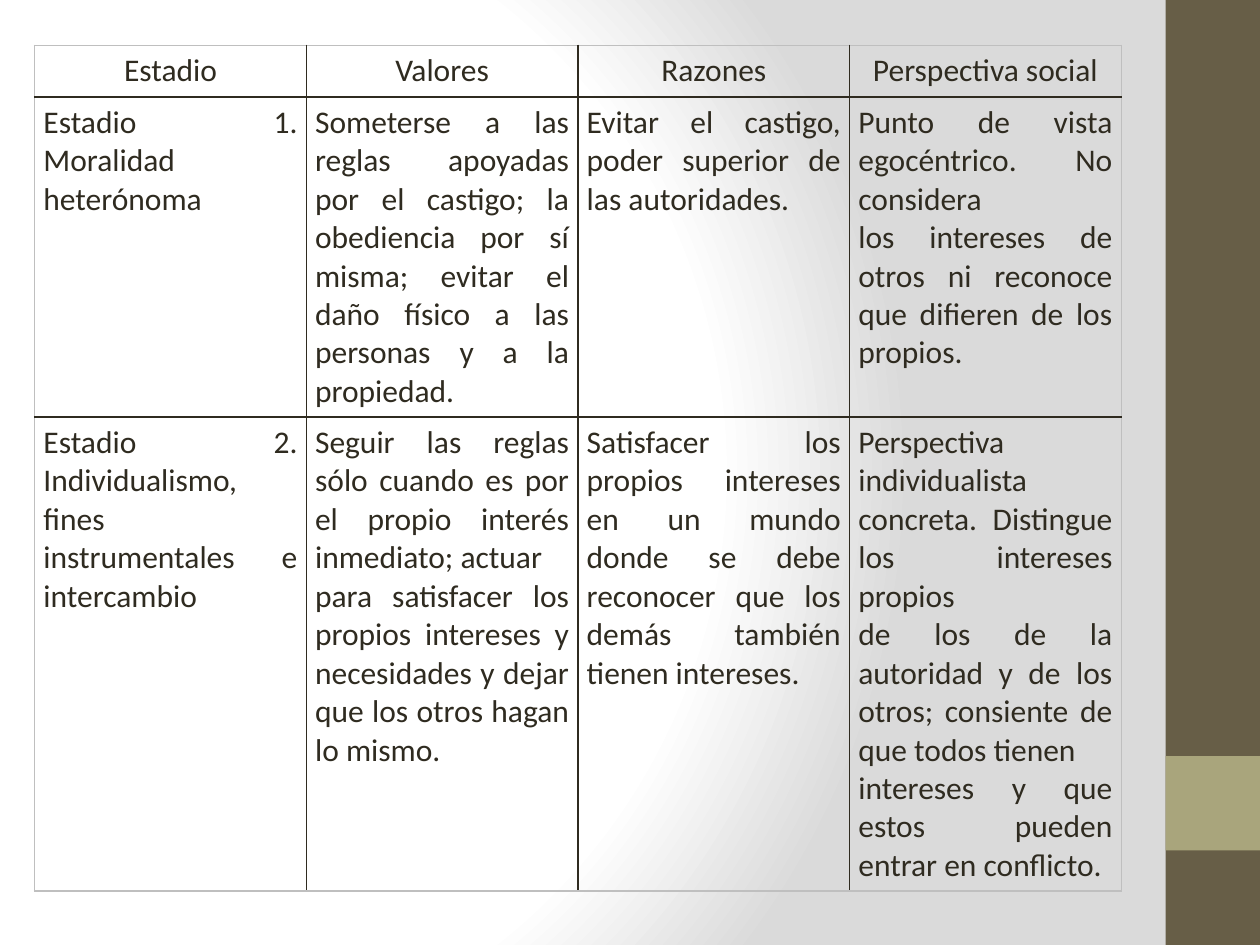
import lxml.etree
import pptx
import pptx.dml.color
import pptx.enum.shapes
import pptx.enum.text
import pptx.oxml
import pptx.oxml.ns
import pptx.util

RGBColor = pptx.dml.color.RGBColor
Inches = pptx.util.Inches
Align = pptx.enum.text.PP_ALIGN

INK = RGBColor(0x2F, 0x2B, 0x20)
FRAME = RGBColor(0xBF, 0xBF, 0xBF)
BROWN = RGBColor(0x67, 0x5E, 0x47)
OLIVE = RGBColor(0xA9, 0xA5, 0x7C)
WHITE = RGBColor(0xFF, 0xFF, 0xFF)
GREY = RGBColor(0xDA, 0xDA, 0xDA)

WIDTH, HEIGHT = Inches(10), Inches(7.5)
ROW_HEIGHTS = [0.41, 2.54, 3.76]

# Each line of a cell is a paragraph.
STAGES = [
    ["Estadio", "Valores", "Razones", "Perspectiva social"],
    [
        "Estadio 1. Moralidad heterónoma",
        "Someterse a las reglas apoyadas por el castigo; la obediencia por sí misma; "
        "evitar el daño físico a las personas y a la propiedad.",
        "Evitar el castigo, poder superior de las autoridades.",
        "Punto de vista egocéntrico. No considera\n"
        "los intereses de otros ni reconoce que difieren de los propios.",
    ],
    [
        "Estadio 2. Individualismo, fines instrumentales e intercambio",
        "Seguir las reglas sólo cuando es por el propio interés inmediato; actuar\n"
        "para satisfacer los propios intereses y necesidades y dejar que los otros "
        "hagan lo mismo.",
        "Satisfacer los propios intereses en un mundo donde se debe reconocer que "
        "los demás también tienen intereses.",
        "Perspectiva individualista concreta. Distingue los intereses propios\n"
        "de los de la autoridad y de los otros; consiente de que todos tienen\n"
        "intereses y que estos pueden entrar en conflicto.",
    ],
]


def write_text(frame, text, font="Calibri", size=18, color=INK, align=Align.JUSTIFY):
    frame.text = text
    for paragraph in frame.paragraphs:
        paragraph.alignment = align
        for run in paragraph.runs:
            run.font.name = font
            run.font.size = pptx.util.Pt(size)
            run.font.color.rgb = color


def set_borders(cell, colors, width=1):
    """Draw the left, right, top and bottom borders, in that order."""
    properties = cell._tc.get_or_add_tcPr()
    for index, (side, color) in enumerate(zip("LRTB", colors)):
        line = pptx.oxml.parse_xml(
            f'<a:ln{side} {pptx.oxml.ns.nsdecls("a")} w="{pptx.util.Pt(width)}">'
            f'<a:solidFill><a:srgbClr val="{color}"/></a:solidFill></a:ln{side}>')
        properties.insert(index, line)


class SlideBuilder:
    """Places elements on a slide by shares of its width and height."""

    def __init__(self, slide):
        self.slide = slide

    def background(self, stops, center):
        self.slide.background.fill.gradient()
        gradient = self.slide.element.find(".//" + pptx.oxml.ns.qn("a:gradFill"))
        for child in list(gradient):
            gradient.remove(child)
        stop_list = lxml.etree.SubElement(gradient, pptx.oxml.ns.qn("a:gsLst"))
        for position, color in stops:
            stop = lxml.etree.SubElement(
                stop_list, pptx.oxml.ns.qn("a:gs"), pos=str(position * 1000))
            lxml.etree.SubElement(stop, pptx.oxml.ns.qn("a:srgbClr"), val=str(color))
        circle = lxml.etree.SubElement(
            gradient, pptx.oxml.ns.qn("a:path"), {"path": "circle"})
        lxml.etree.SubElement(
            circle, pptx.oxml.ns.qn("a:fillToRect"),
            {side: str(share * 1000) for side, share in zip("ltrb", center)})

    def block(self, left, top, width, height, color):
        shape = self.slide.shapes.add_shape(
            pptx.enum.shapes.MSO_SHAPE.RECTANGLE,
            int(left * WIDTH), int(top * HEIGHT), int(width * WIDTH), int(height * HEIGHT))
        shape.shadow.inherit = False
        shape.fill.solid()
        shape.fill.fore_color.rgb = color
        shape.line.fill.background()

    def table(self, left, top, width, row_heights, rows):
        last_row, last_column = len(rows) - 1, len(rows[0]) - 1
        table = self.slide.shapes.add_table(
            len(rows), len(rows[0]), int(left * WIDTH), int(top * HEIGHT),
            int(width * WIDTH), Inches(sum(row_heights))).table
        table.first_row = table.horz_banding = False
        for row, (texts, height) in enumerate(zip(rows, row_heights)):
            table.rows[row].height = Inches(height)
            for column, text in enumerate(texts):
                cell = table.cell(row, column)
                cell.fill.background()
                cell.margin_left = cell.margin_right = Inches(0.07)
                cell.margin_top = cell.margin_bottom = Inches(0.05)
                write_text(cell.text_frame, text,
                           align=Align.JUSTIFY if row else Align.CENTER)
                on_frame = (column == 0, column == last_column, row == 0, row == last_row)
                set_borders(cell, [FRAME if outer else INK for outer in on_frame])


def main():
    presentation = pptx.Presentation()
    presentation.slide_width, presentation.slide_height = WIDTH, HEIGHT
    blank_layout = presentation.slide_layouts[6]
    builder = SlideBuilder(presentation.slides.add_slide(blank_layout))
    builder.background([(0, WHITE), (75, WHITE), (100, GREY)], center=(20, 50, 100, 50))
    builder.block(0.925, 0, 0.075, 1, BROWN)
    builder.block(0.925, 0.8, 0.075, 0.1, OLIVE)
    builder.table(0.0275, 0.048, 0.8625, ROW_HEIGHTS, STAGES)
    presentation.save("out.pptx")


if __name__ == "__main__":
    main()
